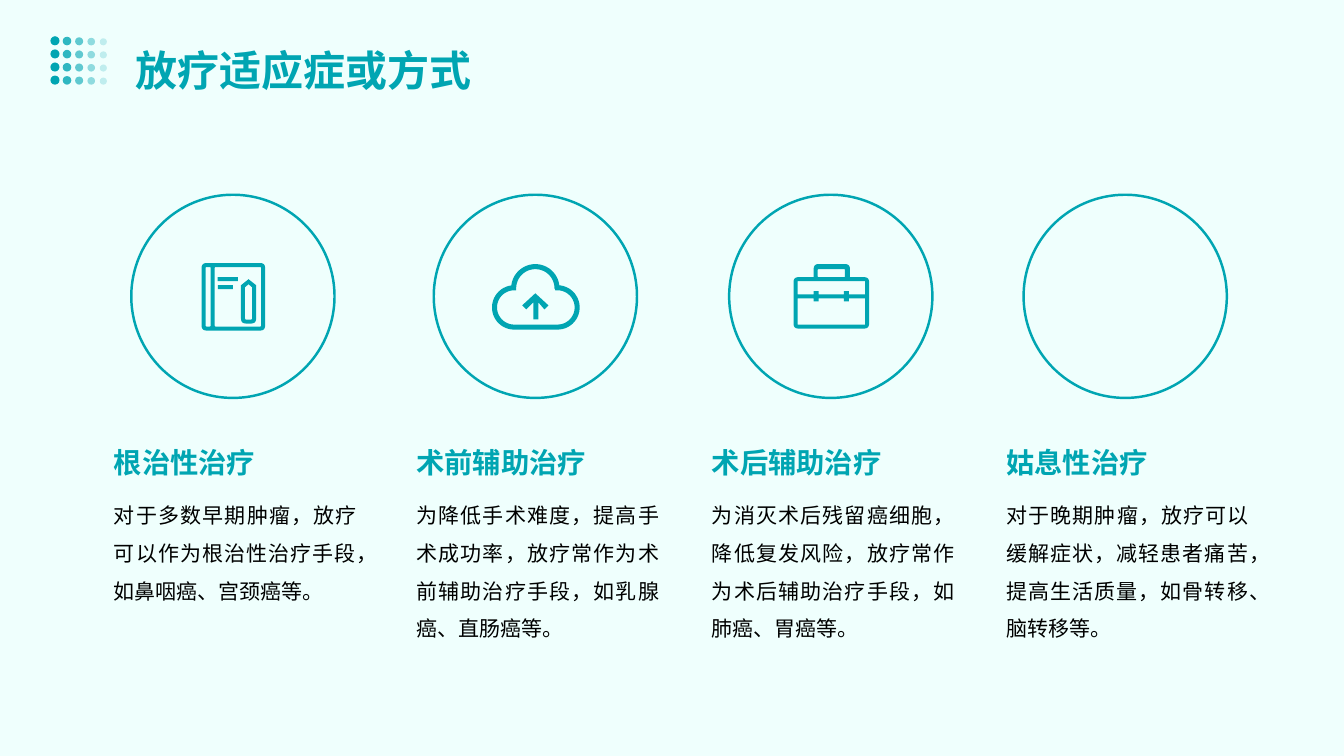
from dataclasses import dataclass
from math import cos, hypot, radians, sin

from lxml.etree import SubElement
from pptx import Presentation
from pptx.dml.color import RGBColor
from pptx.enum.shapes import MSO_SHAPE as Kind
from pptx.enum.text import MSO_ANCHOR as Anchor, MSO_AUTO_SIZE as Fit, PP_ALIGN as Align
from pptx.oxml.ns import qn
from pptx.util import Inches, Pt


@dataclass(frozen=True)
class Theme:
    teal: RGBColor = RGBColor(0x00, 0xA5, 0xB2)
    ink: RGBColor = RGBColor(0, 0, 0)
    back: RGBColor = RGBColor(0xEF, 0xFF, 0xFD)
    face: str = "Noto Sans CJK SC"
    title: float = 30
    head: float = 20.2
    body: float = 15


LOOK = Theme()
HEAD = {"size": Pt(LOOK.head), "bold": True, "color": LOOK.teal}
BODY = {"size": Pt(LOOK.body), "bold": False, "color": LOOK.ink}
TITLE = {"size": Pt(LOOK.title), "bold": True, "color": LOOK.teal}


# Shared helpers
def paint(shape, alpha=100):
    shape.shadow.inherit = False
    shape.fill.solid()
    shape.fill.fore_color.rgb = LOOK.teal
    shape.line.fill.background()
    if alpha < 100:
        color = shape._element.spPr.find(".//" + qn("a:srgbClr"))
        SubElement(color, qn("a:alpha"), val=str(alpha * 1000))


def stamp(slide, kind, x, y, w, h, alpha=100):
    shape = slide.shapes.add_shape(kind, Inches(x), Inches(y), Inches(w), Inches(h))
    paint(shape, alpha)
    return shape


def write(frame, text, style, pads, align=Align.LEFT, lead=1.0):
    left, top, right, low = map(Inches, pads)
    form = {"word_wrap": True, "auto_size": Fit.NONE, "vertical_anchor": Anchor.TOP,
            "margin_left": left, "margin_top": top,
            "margin_right": right, "margin_bottom": low}
    for key, value in form.items():
        setattr(frame, key, value)
    para = frame.paragraphs[0]
    para.alignment, para.line_spacing = align, lead
    run = para.add_run()
    run.text = text
    for key, value in style.items():
        if key == "color":
            run.font.color.rgb = value
        else:
            setattr(run.font, key, value)
    run.font.name = LOOK.face
    SubElement(run.font._element, qn("a:ea"), typeface=LOOK.face)


# Outlines, in inches from the corner of a ring
def arc(x, y, r, start, end, steps=24):
    turns = [radians(start + (end - start) * i / steps) for i in range(steps + 1)]
    return [(x + r * cos(t), y + r * sin(t)) for t in turns]


def soft(points, r=0.01, steps=6):
    """Round the corners of a polygon; a third value sets a corner's own radius."""
    out = []
    for i, (x, y, *own) in enumerate(points):
        size = own[0] if own else r
        ends = []
        for near in (points[i - 1], points[(i + 1) % len(points)]):
            dx, dy = near[0] - x, near[1] - y
            part = size / hypot(dx, dy)
            ends.append((x + dx * part, y + dy * part))
        (ax, ay), (bx, by) = ends
        for t in [k / steps for k in range(steps + 1)] if size else [0]:
            u = 1 - t
            out.append((u * u * ax + 2 * u * t * x + t * t * bx,
                        u * u * ay + 2 * u * t * y + t * t * by))
    return out


def block(x, y, w, h, r=0.01):
    return soft([(x, y), (x + w, y), (x + w, y + h), (x, y + h)], r)


def trace(slide, x, y, *loops):
    spots = [[(Inches(x + a), Inches(y + b)) for a, b in loop] for loop in loops]
    pen = slide.shapes.build_freeform(*spots[0][0])
    for i, loop in enumerate(spots):
        if i:
            pen.move_to(*loop[0])
        pen.add_line_segments(loop[1:], close=True)
    paint(pen.convert_to_shape())


# Icons
def book(slide, x, y):
    trace(slide, x, y, block(0.71, 0.69, 0.63, 0.67, 0.05),
          block(0.75, 0.73, 0.05, 0.59), block(0.84, 0.73, 0.46, 0.59))
    for top, wide in ((0.83, 0.2), (0.91, 0.15)):
        stamp(slide, Kind.RECTANGLE, x + 0.87, y + top, wide, 0.04)

    def nib(left, right, tip, neck, low, r):
        return soft([((left + right) / 2, tip, 0), (right, neck, 0),
                     (right, low, r), (left, low, r), (left, neck, 0)])
    trace(slide, x, y, nib(1.1, 1.25, 0.85, 0.91, 1.29, 0.05),
          nib(1.14, 1.21, 0.9, 0.93, 1.25, 0.01))


def cloud(slide, x, y):
    arrow = [(0.89, 1.11), (0.93, 1.15), (1, 1.08), (1, 1.25), (1.05, 1.25),
             (1.05, 1.08), (1.11, 1.15), (1.15, 1.11), (1.02, 0.99)]
    trace(slide, x, y, arrow)

    def puff(side, top, bend, dip):
        return (arc(0.81, 1.13, side, 90, 270 + bend)
                + arc(1.02, 0.94, top, 180 + dip, 360 - dip)
                + arc(1.24, 1.13, side, 270 - bend, 450))
    trace(slide, x, y, puff(0.22, 0.24, -8, 7), puff(0.17, 0.19, 7, 0))


def case(slide, x, y):
    shell = soft([(0.65, 0.83), (0.85, 0.83, 0), (0.85, 0.7), (1.21, 0.7),
                  (1.21, 0.83, 0), (1.4, 0.83), (1.4, 1.34), (0.65, 1.34)], 0.05)

    def bay(edge, mid, tab):
        return [(0.69, edge), (1.36, edge), (1.36, mid), (1.2, mid), (1.2, tab),
                (1.15, tab), (1.15, mid), (0.9, mid), (0.9, tab),
                (0.85, tab), (0.85, mid), (0.69, mid)]
    trace(slide, x, y, shell, block(0.89, 0.75, 0.27, 0.08),
          bay(0.87, 1, 0.97), bay(1.3, 1.04, 1.07))


# Title with its dot grid
def header(slide, x, y):
    for row in range(4):
        for col in range(5):
            size = 0.09 - 0.005 * col
            stamp(slide, Kind.OVAL, x + 0.1225 * col, y + 0.13 * row + 0.005 * col,
                  size, size, 100 - 20 * col)
    title = slide.shapes.title
    box = {"left": x + 0.7, "top": y - 0.26, "width": 10.94, "height": 0.98}
    for key, value in box.items():
        setattr(title, key, Inches(value))
    write(title.text_frame, "放疗适应症或方式", TITLE, (0.14, 0.14, 0.06, 0.14), lead=1.4)


# One therapy: ring, icon, heading, text
def column(slide, x, y, icon, head, body):
    left = x + 0.25
    ring = stamp(slide, Kind.DONUT, left, y, 2.04, 2.04)
    ring.adjustments[0] = 0.012
    if icon:
        icon(slide, left, y)
    rows = ((2.41, 2.78, 0.45, head, HEAD, Align.LEFT, 1.0),
            (2.85, 2.55, 1.74, body, BODY, Align.JUSTIFY, 1.5))
    for drop, wide, tall, text, style, align, lead in rows:
        box = slide.shapes.add_textbox(Inches(x), Inches(y + drop),
                                       Inches(wide), Inches(tall))
        write(box.text_frame, text, style, (0.09, 0.09, 0.05, 0.09), align, lead)


THERAPIES = [
    (1.04, book, "根治性治疗",
     "对于多数早期肿瘤，放疗可以作为根治性治疗手段，如鼻咽癌、宫颈癌等。"),
    (4.04, cloud, "术前辅助治疗",
     "为降低手术难度，提高手术成功率，放疗常作为术前辅助治疗手段，如乳腺癌、直肠癌等。"),
    (6.97, case, "术后辅助治疗",
     "为消灭术后残留癌细胞，降低复发风险，放疗常作为术后辅助治疗手段，如肺癌、胃癌等。"),
    (9.89, None, "姑息性治疗",
     "对于晚期肿瘤，放疗可以缓解症状，减轻患者痛苦，提高生活质量，如骨转移、脑转移等。"),
]


def main():
    deck = Presentation()
    deck.slide_width, deck.slide_height = Inches(13.33), Inches(7.5)
    slide = deck.slides.add_slide(deck.slide_layouts[5])
    slide.background.fill.solid()
    slide.background.fill.fore_color.rgb = LOOK.back
    header(slide, 0.5, 0.36)
    for x, *parts in THERAPIES:
        column(slide, x, 1.92, *parts)
    deck.save("out.pptx")


if __name__ == "__main__":
    main()
